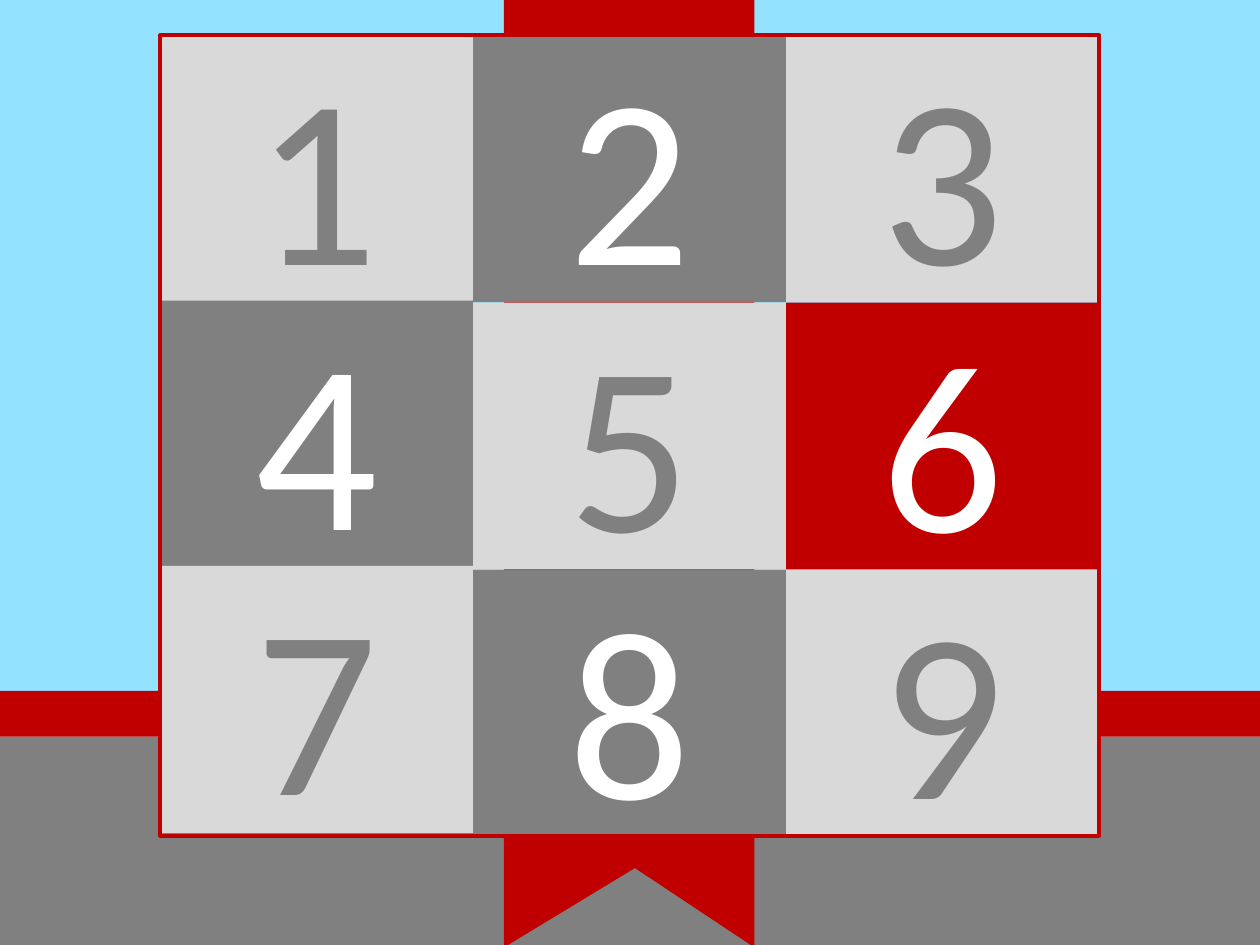
import pptx
import pptx.util
import pptx.dml.color
import pptx.enum.shapes
import pptx.enum.text

Cm = pptx.util.Cm
RGBColor = pptx.dml.color.RGBColor

GREY = RGBColor(0x80, 0x80, 0x80)
LIGHT = RGBColor(0xD9, 0xD9, 0xD9)
SKY = RGBColor(0x93, 0xE2, 0xFF)
RED = RGBColor(0xC0, 0x00, 0x00)
WHITE = RGBColor(0xFF, 0xFF, 0xFF)

prs = pptx.Presentation()
prs.slide_width = Cm(25.4)
prs.slide_height = Cm(19.05)
s = prs.slides.add_slide(prs.slide_layouts[6])


def add_rect(left, top, width, height, fill):
    sp = s.shapes.add_shape(pptx.enum.shapes.MSO_SHAPE.RECTANGLE,
                            Cm(left), Cm(top), Cm(width), Cm(height))
    sp.shadow.inherit = False
    sp.line.fill.background()
    if fill is None:
        sp.fill.background()
    else:
        sp.fill.solid()
        sp.fill.fore_color.rgb = fill
    return sp


add_rect(0, 14.85, 25.4, 4.25, GREY)
add_rect(0, 0, 25.4, 13.93, SKY)

fb = s.shapes.build_freeform(Cm(10.16), Cm(0))
fb.add_line_segments([(Cm(x), Cm(y)) for x, y in
                      [(15.21, 0), (15.21, 19.1), (12.8, 17.5), (10.16, 19.1)]])
ribbon = fb.convert_to_shape()
ribbon.shadow.inherit = False
ribbon.fill.solid()
ribbon.fill.fore_color.rgb = RED
ribbon.line.fill.background()

add_rect(0, 13.93, 25.4, 0.92, RED)

LEFT, TOP = 3.23, 0.71
CELL_W, CELL_H = 6.31, 5.38

for i in range(9):
    row, col = divmod(i, 3)
    number = i + 1
    row_step = 5.35 if col == 0 else 5.39
    fill = RED if number == 6 else GREY if number % 2 == 0 else LIGHT
    sp = add_rect(LEFT + col * CELL_W, TOP + row * row_step, CELL_W, CELL_H, fill)
    tf = sp.text_frame
    tf.text = str(number)
    tf.vertical_anchor = pptx.enum.text.MSO_ANCHOR.MIDDLE
    p = tf.paragraphs[0]
    p.alignment = pptx.enum.text.PP_ALIGN.CENTER
    r = p.runs[0]
    r.font.name = "Calibri"
    r.font.size = pptx.util.Pt(138)
    r.font.color.rgb = GREY if fill == LIGHT else WHITE

frame = add_rect(LEFT, TOP, 3 * CELL_W, 3 * CELL_H, None)
frame.line.color.rgb = RED
frame.line.width = pptx.util.Pt(2)

prs.save("out.pptx")
